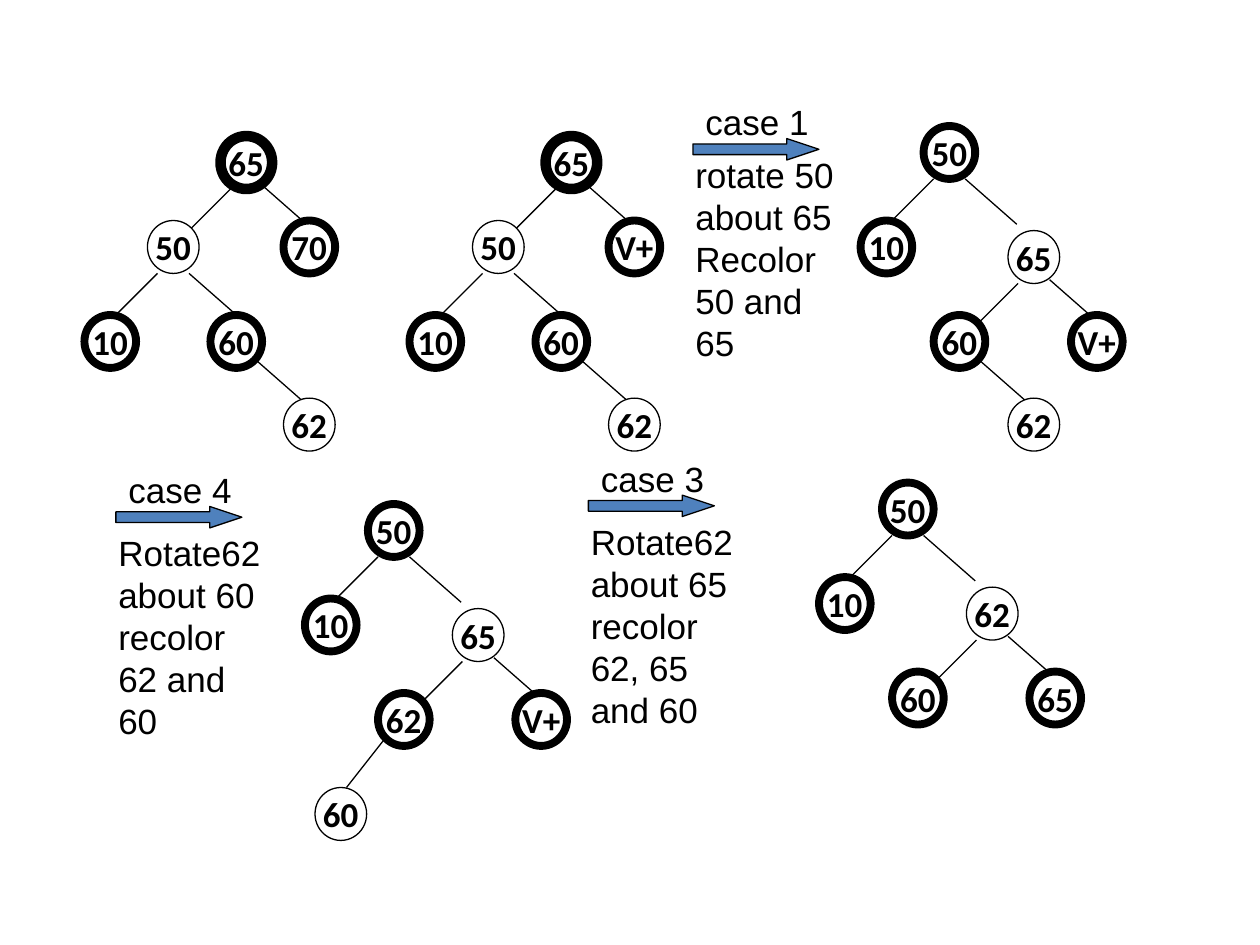
from lxml import etree
from pptx import Presentation, util as u
from pptx.dml.color import RGBColor
from pptx.enum import shapes, text
from pptx.oxml import ns

COLORS = {"ink": "000000", "node": "FFFFFF", "arrow": "4F81BD"}
THIN, BLACK, ROOT = 0.75, 4.5, 6
NODE_SIZE = (0.41, 0.42)
ARROW_SIZE = (1, 0.17)
NODE_FONT = {"name": "Calibri", "size": u.Pt(20), "bold": True}
STEP_FONT = {"name": "Arial", "size": u.Pt(20)}

# Slots are offsets from the root; edges are (parent, start, run).
LEFT, RIGHT = (-0.33, 0.33), (0.41, 0.36)
LAYOUTS = {
    "unbalanced": {
        "slots": [(0, 0), (-0.58, 0.67), (0.5, 0.67), (-1.08, 1.42), (-0.08, 1.42), (0.5, 2.08)],
        "edges": [(0, (0.08, 0.42), LEFT), (0, (0.33, 0.39), RIGHT),
                  (1, (0.08, 0.42), LEFT), (1, (0.33, 0.42), RIGHT),
                  (4, (0.33, 0.33), RIGHT)],
    },
    "rotated": {
        "slots": [(0, 0), (-0.5, 0.75), (0.67, 0.83), (0.08, 1.5), (1.17, 1.5)],
        "edges": [(0, (0.08, 0.42), LEFT), (0, (0.33, 0.42), RIGHT),
                  (2, (0.08, 0.42), LEFT), (2, (0.33, 0.39), RIGHT)],
    },
}
RIGHT_LEAF = ((0.67, 2.16), (3, (0.33, 0.33), RIGHT))
LEFT_LEAF = ((-0.42, 2.25), (3, (0.08, 0.33), (-0.33, 0.42)))

UNBALANCED_BORDERS = [ROOT, THIN, BLACK, BLACK, BLACK, THIN]
ROTATED_BORDERS = [BLACK, BLACK, THIN, BLACK, BLACK, THIN]
TREES = [
    ("unbalanced", (1.75, 1.08), ["65", "50", "70", "10", "60", "62"], UNBALANCED_BORDERS, None),
    ("unbalanced", (4.33, 1.08), ["65", "50", "V+", "10", "60", "62"], UNBALANCED_BORDERS, None),
    ("rotated", (7.33, 1), ["50", "10", "65", "60", "V+", "62"], ROTATED_BORDERS, RIGHT_LEAF),
    ("rotated", (2.92, 4), ["50", "10", "65", "62", "V+", "60"], ROTATED_BORDERS, LEFT_LEAF),
    ("rotated", (7, 3.83), ["50", "10", "62", "60", "65"], ROTATED_BORDERS, None),
]
STEPS = [
    ("case 1", (5.5, 1.1), ["rotate 50 about 65", "Recolor 50 and 65"], 0.07, 1.33),
    ("case 4", (0.92, 4.02), ["Rotate62 about 60 recolor 62 and 60"], 0.15, 1.42),
    ("case 3", (4.67, 3.93), ["Rotate62 about 65 recolor 62, 65 and 60"], 0.15, 1.42),
]


def color(name):
    return RGBColor.from_string(COLORS[name])


def inches(*lengths):
    return [u.Inches(length) for length in lengths]


def shift(point, offset):
    return point[0] + offset[0], point[1] + offset[1]


def apply(target, values):
    for key, value in values.items():
        setattr(target, key, value)


def outline(part, width):
    part.line.color.rgb = color("ink")
    part.line.width = u.Pt(width)


def write(frame, paragraphs, font, align):
    frame.text = "\n".join(paragraphs)
    for paragraph in frame.paragraphs:
        paragraph.alignment = align
        apply(paragraph.runs[0].font, font)
        paragraph.runs[0].font.color.rgb = color("ink")


def draw_solid(slide, preset, position, size, fill, border):
    solid = slide.shapes.add_shape(preset, *inches(*position, *size))
    solid.shadow.inherit = False
    solid.fill.solid()
    solid.fill.fore_color.rgb = color(fill)
    outline(solid, border)
    return solid


def draw_edge(slide, start, end):
    edge = slide.shapes.add_connector(shapes.MSO_CONNECTOR.STRAIGHT, *inches(*start, *end))
    outline(edge, THIN)
    etree.SubElement(edge._element.spPr, ns.qn("a:effectLst"))


def draw_node(slide, position, label, border):
    node = draw_solid(slide, shapes.MSO_SHAPE.OVAL, position, NODE_SIZE, "node", border)
    apply(node.text_frame, {"word_wrap": False, "vertical_anchor": text.MSO_ANCHOR.MIDDLE})
    write(node.text_frame, [label], NODE_FONT, text.PP_ALIGN.CENTER)


def draw_tree(slide, layout, root, labels, borders, leaf):
    slots, edges = LAYOUTS[layout]["slots"], LAYOUTS[layout]["edges"]
    if leaf:
        slots, edges = slots + [leaf[0]], edges + [leaf[1]]
    positions = [shift(root, slot) for slot in slots]
    for parent, offset, run in edges:
        start = shift(positions[parent], offset)
        draw_edge(slide, start, shift(start, run))
    for position, label, border in zip(positions, labels, borders):
        draw_node(slide, position, label, border)


def draw_words(slide, position, size, paragraphs):
    words = slide.shapes.add_textbox(*inches(*position, *size))
    apply(words.text_frame, {"word_wrap": True, "auto_size": text.MSO_AUTO_SIZE.SHAPE_TO_FIT_TEXT})
    write(words.text_frame, paragraphs, STEP_FONT, text.PP_ALIGN.LEFT)


def draw_step(slide, case, origin, actions, drop, width):
    arrow = draw_solid(slide, shapes.MSO_SHAPE.RIGHT_ARROW, origin, ARROW_SIZE, "arrow", THIN)
    arrow.adjustments[0], arrow.adjustments[1] = 0.5, 1.5
    draw_words(slide, shift(origin, (0, -0.35)), (1.08, 0.43), [case])
    draw_words(slide, shift(origin, (-0.08, drop)), (width, 1.43), actions)


def main():
    deck = Presentation()
    apply(deck, {"slide_width": u.Inches(10), "slide_height": u.Inches(7.5)})
    slide = deck.slides.add_slide(deck.slide_layouts[6])
    for tree in TREES:
        draw_tree(slide, *tree)
    for step in STEPS:
        draw_step(slide, *step)
    deck.save("out.pptx")


if __name__ == "__main__":
    main()
